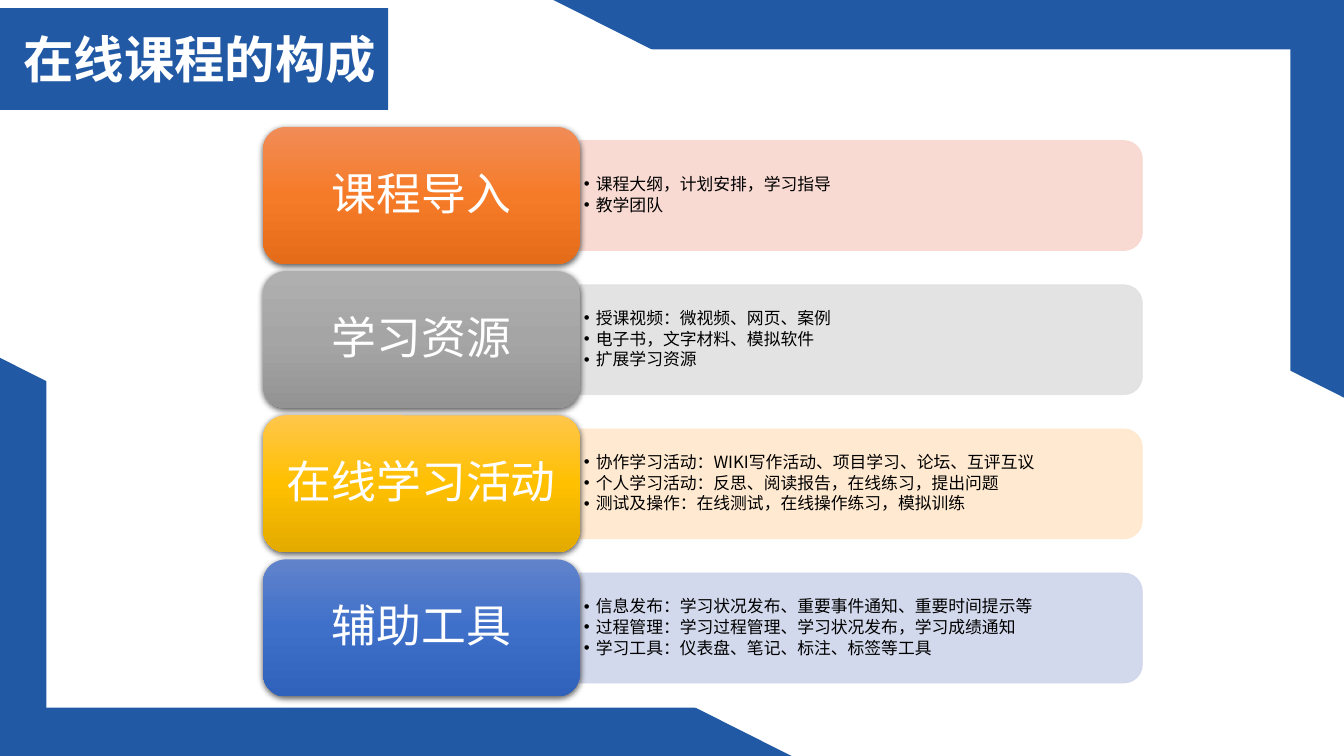
from dataclasses import dataclass

from lxml.etree import SubElement
from pptx import Presentation
from pptx.dml.color import RGBColor
from pptx.enum.shapes import MSO_SHAPE
from pptx.enum.text import MSO_ANCHOR, MSO_AUTO_SIZE, PP_ALIGN
from pptx.oxml.ns import qn
from pptx.util import Inches, Pt

FONT = "Noto Sans CJK SC"
BLUE = RGBColor(0x21, 0x59, 0xA5)
WHITE = RGBColor(0xFF, 0xFF, 0xFF)
BLACK = RGBColor(0x00, 0x00, 0x00)

FIRST_TOP = 1.26
ROW_PITCH = 1.43
LABEL_LEFT, LABEL_WIDTH, LABEL_HEIGHT = 2.61, 3.14, 1.36
PANEL_WIDTH, PANEL_HEIGHT = 5.58, 1.09
LIST_WIDTH, LIST_HEIGHT = 5.52, 0.98

TITLE_FORMAT = {"size": Pt(36), "bold": True, "name": FONT}
LABEL_FORMAT = {"size": Pt(32), "bold": False, "name": FONT}
LIST_FORMAT = {"size": Pt(12), "bold": False, "name": FONT}


@dataclass
class Section:
    label: str
    items: list[str]
    panel: RGBColor
    gradient: list[RGBColor]


@dataclass
class Block:
    kind: MSO_SHAPE
    left: float
    top: float
    width: float
    height: float
    color: RGBColor
    rotation: int = 0


FRAME = [
    Block(MSO_SHAPE.RIGHT_TRIANGLE, 5.41, -0.04, 7.95, 4, BLUE, 180),
    Block(MSO_SHAPE.RIGHT_TRIANGLE, -0.02, 3.54, 7.95, 4, BLUE),
    Block(MSO_SHAPE.RECTANGLE, 0.46, 0.49, 12.34, 6.53, WHITE),
    Block(MSO_SHAPE.RECTANGLE, -0.02, 0.08, 3.87, 1.01, BLUE),
]

SECTIONS = [
    Section("课程导入",
            ["课程大纲，计划安排，学习指导", "教学团队"],
            RGBColor(0xF8, 0xD7, 0xCE),
            [RGBColor(0xF1, 0x8C, 0x57), RGBColor(0xF6, 0x7B, 0x28), RGBColor(0xE5, 0x6C, 0x19)]),
    Section("学习资源",
            ["授课视频：微视频、网页、案例", "电子书，文字材料、模拟软件", "扩展学习资源"],
            RGBColor(0xE1, 0xE1, 0xE1),
            [RGBColor(0xAF, 0xAF, 0xAF), RGBColor(0xA5, 0xA5, 0xA5), RGBColor(0x93, 0x93, 0x93)]),
    Section("在线学习活动",
            ["协作学习活动：WIKI写作活动、项目学习、论坛、互评互议",
             "个人学习活动：反思、阅读报告，在线练习，提出问题",
             "测试及操作：在线测试，在线操作练习，模拟训练"],
            RGBColor(0xFF, 0xE8, 0xCC),
            [RGBColor(0xFF, 0xC6, 0x4B), RGBColor(0xFF, 0xC0, 0x00), RGBColor(0xE3, 0xAB, 0x00)]),
    Section("辅助工具",
            ["信息发布：学习状况发布、重要事件通知、重要时间提示等",
             "过程管理：学习过程管理、学习状况发布，学习成绩通知",
             "学习工具：仪表盘、笔记、标注、标签等工具"],
            RGBColor(0xCF, 0xD5, 0xEA),
            [RGBColor(0x61, 0x83, 0xCB), RGBColor(0x3E, 0x70, 0xCA), RGBColor(0x30, 0x62, 0xBB)]),
]


def add_block(page, block: Block):
    shape = page.shapes.add_shape(block.kind, Inches(block.left), Inches(block.top),
                                  Inches(block.width), Inches(block.height))
    shape.shadow.inherit = False
    shape.rotation = block.rotation
    shape.fill.solid()
    shape.fill.fore_color.rgb = block.color
    shape.line.fill.background()
    return shape


def move_to_front(page, holder, left: float, top: float, width: float, height: float) -> None:
    holder.left, holder.top = Inches(left), Inches(top)
    holder.width, holder.height = Inches(width), Inches(height)
    page.shapes.element.append(holder.element)


def set_frame(frame, anchor: MSO_ANCHOR, side: float, edge: float) -> None:
    values = {"margin_left": Inches(side), "margin_right": Inches(side),
              "margin_top": Inches(edge), "margin_bottom": Inches(edge),
              "vertical_anchor": anchor, "word_wrap": True,
              "auto_size": MSO_AUTO_SIZE.NONE}
    for name, value in values.items():
        setattr(frame, name, value)


def write(para, text: str, values: dict, color: RGBColor) -> None:
    span = para.add_run()
    span.text = text
    for name, value in values.items():
        setattr(span.font, name, value)
    span.font.color.rgb = color
    SubElement(span.font._element, qn("a:ea"), typeface=FONT)


def set_spacing(para, after_percent: int):
    para.line_spacing = 0.9
    para.space_before = Pt(0)
    properties = para._p.get_or_add_pPr()
    after = SubElement(properties, qn("a:spcAft"))
    SubElement(after, qn("a:spcPct"), val=str(after_percent * 1000))
    return properties


def add_panel(page, top: float, color: RGBColor) -> None:
    middle = LABEL_LEFT + LABEL_WIDTH + PANEL_WIDTH / 2
    panel = add_block(page, Block(MSO_SHAPE.ROUND_2_SAME_RECTANGLE, middle - PANEL_HEIGHT / 2,
                                  top + (LABEL_HEIGHT - PANEL_WIDTH) / 2,
                                  PANEL_HEIGHT, PANEL_WIDTH, color, 90))
    panel.line.color.rgb = color
    panel.line.width = Pt(0.5)
    for paint in panel.element.spPr.iter(qn("a:srgbClr")):
        SubElement(paint, qn("a:alpha"), val="90000")


def add_label(page, top: float, section: Section) -> None:
    label = add_block(page, Block(MSO_SHAPE.ROUNDED_RECTANGLE, LABEL_LEFT, top,
                                  LABEL_WIDTH, LABEL_HEIGHT, section.gradient[1]))
    # Three-stop gradient from top to bottom
    label.fill.gradient()
    label.fill.gradient_angle = 270
    stops = label.element.spPr.find(".//" + qn("a:gsLst"))
    stops.clear()
    for index, color in enumerate(section.gradient):
        stop = SubElement(stops, qn("a:gs"), pos=str(index * 50000))
        SubElement(stop, qn("a:srgbClr"), val=str(color))
    # Soft shadow below
    effects = label.element.spPr.find(qn("a:effectLst"))
    shadow = SubElement(effects, qn("a:outerShdw"), blurRad=str(Pt(4.5)), dist=str(Pt(1.5)),
                        dir="5400000", algn="ctr", rotWithShape="0")
    shade = SubElement(shadow, qn("a:srgbClr"), val=str(BLACK))
    SubElement(shade, qn("a:alpha"), val="63000")
    set_frame(label.text_frame, MSO_ANCHOR.MIDDLE, 0.1, 0.1)
    para = label.text_frame.paragraphs[0]
    para.alignment = PP_ALIGN.CENTER
    set_spacing(para, 35)
    write(para, section.label, LABEL_FORMAT, WHITE)


def fill_list(page, holder, top: float, items: list[str]) -> None:
    move_to_front(page, holder, LABEL_LEFT + LABEL_WIDTH - 0.01,
                  top + (LABEL_HEIGHT - LIST_HEIGHT) / 2, LIST_WIDTH, LIST_HEIGHT)
    frame = holder.text_frame
    set_frame(frame, MSO_ANCHOR.MIDDLE, 0.05, 0.03)
    for index, item in enumerate(items):
        para = frame.add_paragraph() if index else frame.paragraphs[0]
        para.level = 1
        para.alignment = PP_ALIGN.LEFT
        properties = set_spacing(para, 15)
        properties.set("marL", str(Inches(0.12)))
        properties.set("indent", str(Inches(-0.12)))
        SubElement(properties, qn("a:buChar"), char="•")
        write(para, item, LIST_FORMAT, BLACK)


def main() -> None:
    deck = Presentation()
    deck.slide_width, deck.slide_height = Inches(13.33), Inches(7.5)
    # The comparison layout has a title and four bodies
    page = deck.slides.add_slide(deck.slide_layouts[4])
    title, *bodies = list(page.placeholders)

    # Corner frame and title band
    for block in FRAME:
        add_block(page, block)
    move_to_front(page, title, 0.13, 0.23, 3.83, 0.71)
    set_frame(title.text_frame, MSO_ANCHOR.TOP, 0.1, 0.05)
    heading = title.text_frame.paragraphs[0]
    heading.alignment = PP_ALIGN.LEFT
    write(heading, "在线课程的构成", TITLE_FORMAT, WHITE)

    # One row for each course section
    for row, (section, body) in enumerate(zip(SECTIONS, bodies)):
        top = FIRST_TOP + row * ROW_PITCH
        add_panel(page, top, section.panel)
        fill_list(page, body, top, section.items)
        add_label(page, top, section)

    deck.save("out.pptx")


if __name__ == "__main__":
    main()
